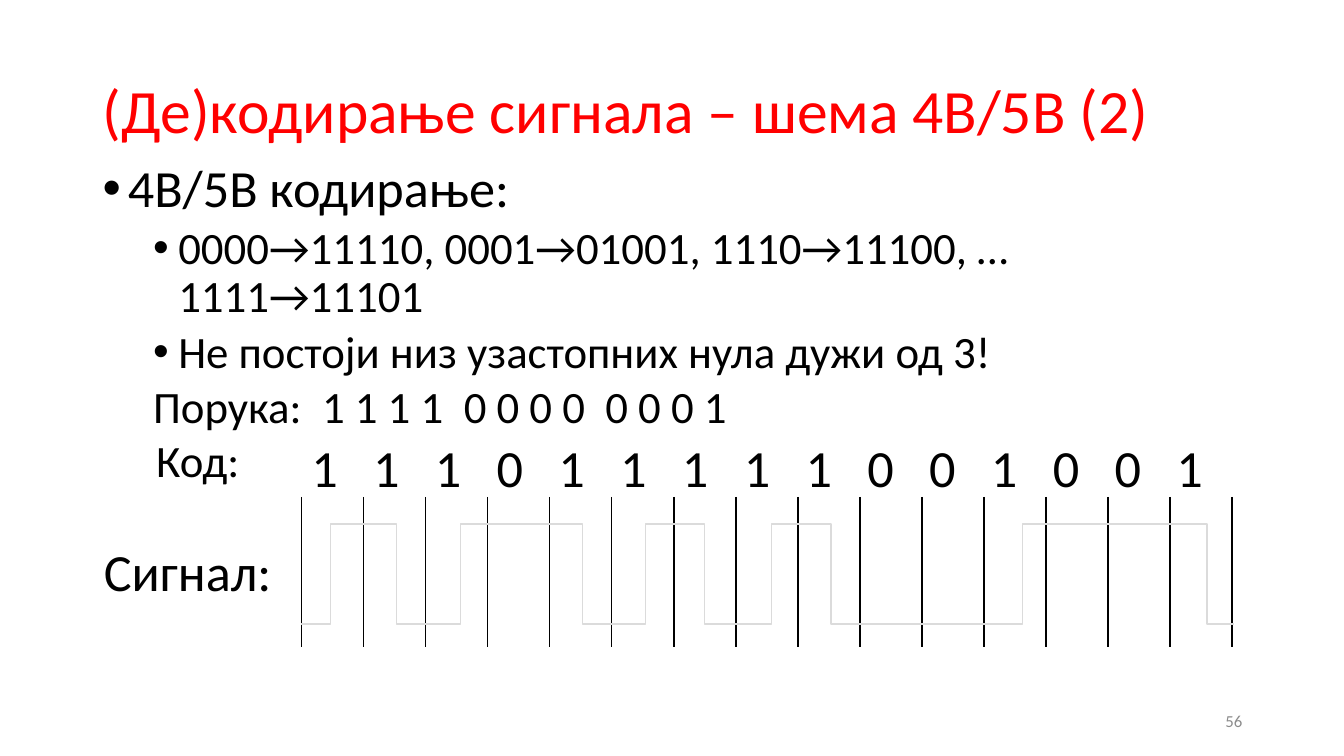
"""Build the slide on 4B/5B signal coding with its bit grid and waveform."""
from lxml import etree
from pptx import Presentation
from pptx.dml.color import RGBColor
from pptx.enum.shapes import MSO_CONNECTOR
from pptx.enum.text import MSO_ANCHOR, PP_ALIGN
from pptx.oxml.ns import qn
from pptx.util import Inches, Pt

STRAIGHT = MSO_CONNECTOR.STRAIGHT
TOP, MIDDLE = MSO_ANCHOR.TOP, MSO_ANCHOR.MIDDLE
LEFT, RIGHT = PP_ALIGN.LEFT, PP_ALIGN.RIGHT
COLORS = {"title": "FF0000", "text": "000000", "signal": "DBDBDB", "number": "8C8C8C"}
FONT = "Calibri"
LARGE, MEDIUM = 37.3, 32
SPACE = 0.226

BITS = "111011111001001"
GRID_LEFT, GRID_TOP, GRID_BOTTOM = 2.99, 4.93, 6.42
BIT_WIDTH = 9.23 / len(BITS)
HIGH, LOW = 5.2, 6.19
EDGES = [3.28, 3.93, 4.57, 5.78, 6.4, 6.99, 7.65, 8.24, 10.14, 11.97]
SIGNAL_END = 12.24


def write(p, text, size=MEDIUM, color="text", spacing=0):
    r = p.add_run()
    r.text = text
    r.font.name, r.font.size = FONT, Pt(size)
    r.font.color.rgb = RGBColor.from_string(COLORS[color])
    if spacing:
        r._r.get_or_add_rPr().set("spc", str(round(spacing * 100)))


def add_box(x, y, w, h, anchor=TOP, wrap=True, inset=True):
    tf = s.shapes.add_textbox(Inches(x), Inches(y), Inches(w), Inches(h)).text_frame
    tf.word_wrap, tf.vertical_anchor = wrap, anchor
    if not inset:
        tf.margin_left = tf.margin_right = tf.margin_top = tf.margin_bottom = 0
    return tf


prs = Presentation()
prs.slide_width, prs.slide_height = Inches(13.33), Inches(7.5)
s = prs.slides.add_slide(prs.slide_layouts[6])

p = add_box(0.92, 0.4, 11.5, 1.45, MIDDLE).paragraphs[0]
p.line_spacing = 0.9
write(p, "(Де)кодирање сигнала – шема 4B/5B (2)", 44, "title")

body = [
    (0, 0.25, True, LARGE, "4B/5B кодирање:"),
    (1, 0.75, True, MEDIUM, "0000→11110, 0001→01001, 1110→11100, … 1111→11101"),
    (1, 0.75, True, MEDIUM, "Не постоји низ узастопних нула дужи од 3!"),
    (1, 0.5, False, MEDIUM, "Порука:"),
]
tf = add_box(0.92, 1.56, 11.5, 4.76)
for i, (level, margin, bullet, size, text) in enumerate(body):
    p = tf.add_paragraph() if i else tf.paragraphs[0]
    p.level, p.line_spacing, p.space_before = level, 0.9, Pt(5 if level else 10)
    pPr = p._p.get_or_add_pPr()
    pPr.set("marL", str(Inches(margin)))
    pPr.set("indent", str(Inches(-0.25 if bullet else 0)))
    if bullet:
        etree.SubElement(pPr, qn("a:buFont")).set("typeface", "Arial")
        etree.SubElement(pPr, qn("a:buChar")).set("char", "•")
    else:
        etree.SubElement(pPr, qn("a:buNone"))
    write(p, text, size)
for group in ("1 1 1 1", "0 0 0 0", "0 0 0 1"):
    write(p, " ", spacing=SPACE * MEDIUM)
    write(p, group)

for i in range(len(BITS) + 1):
    x = Inches(GRID_LEFT + i * BIT_WIDTH)
    sp = s.shapes.add_connector(STRAIGHT, x, Inches(GRID_TOP), x, Inches(GRID_BOTTOM))
    sp.line.color.rgb = RGBColor.from_string(COLORS["text"])
    sp.line.width = Pt(1.13)
    etree.SubElement(sp._element.spPr, qn("a:effectLst"))

write(add_box(1.55, 4.29, 0.83, 0.54, wrap=False, inset=False).paragraphs[0], "Код:")
write(add_box(1.03, 5.35, 1.68, 0.63, wrap=False, inset=False).paragraphs[0], "Сигнал:", LARGE)
p = add_box(GRID_LEFT, 4.26, 9.68, 0.73, MIDDLE).paragraphs[0]
write(p, " ".join(BITS), LARGE, spacing=SPACE * LARGE)

points, level = [], LOW
for x in EDGES:
    points.append((Inches(x), Inches(level)))
    level = HIGH if level == LOW else LOW
    points.append((Inches(x), Inches(level)))
points.append((Inches(SIGNAL_END), Inches(level)))
builder = s.shapes.build_freeform(Inches(GRID_LEFT), Inches(LOW))
builder.add_line_segments(points, close=False)
sp = builder.convert_to_shape()
sp.shadow.inherit = False
sp.fill.background()
sp.line.color.rgb = RGBColor.from_string(COLORS["signal"])
sp.line.width = Pt(1)

p = add_box(9.42, 6.95, 3, 0.4, MIDDLE).paragraphs[0]
p.alignment = RIGHT
write(p, "56", 12, "number")

prs.save("out.pptx")
